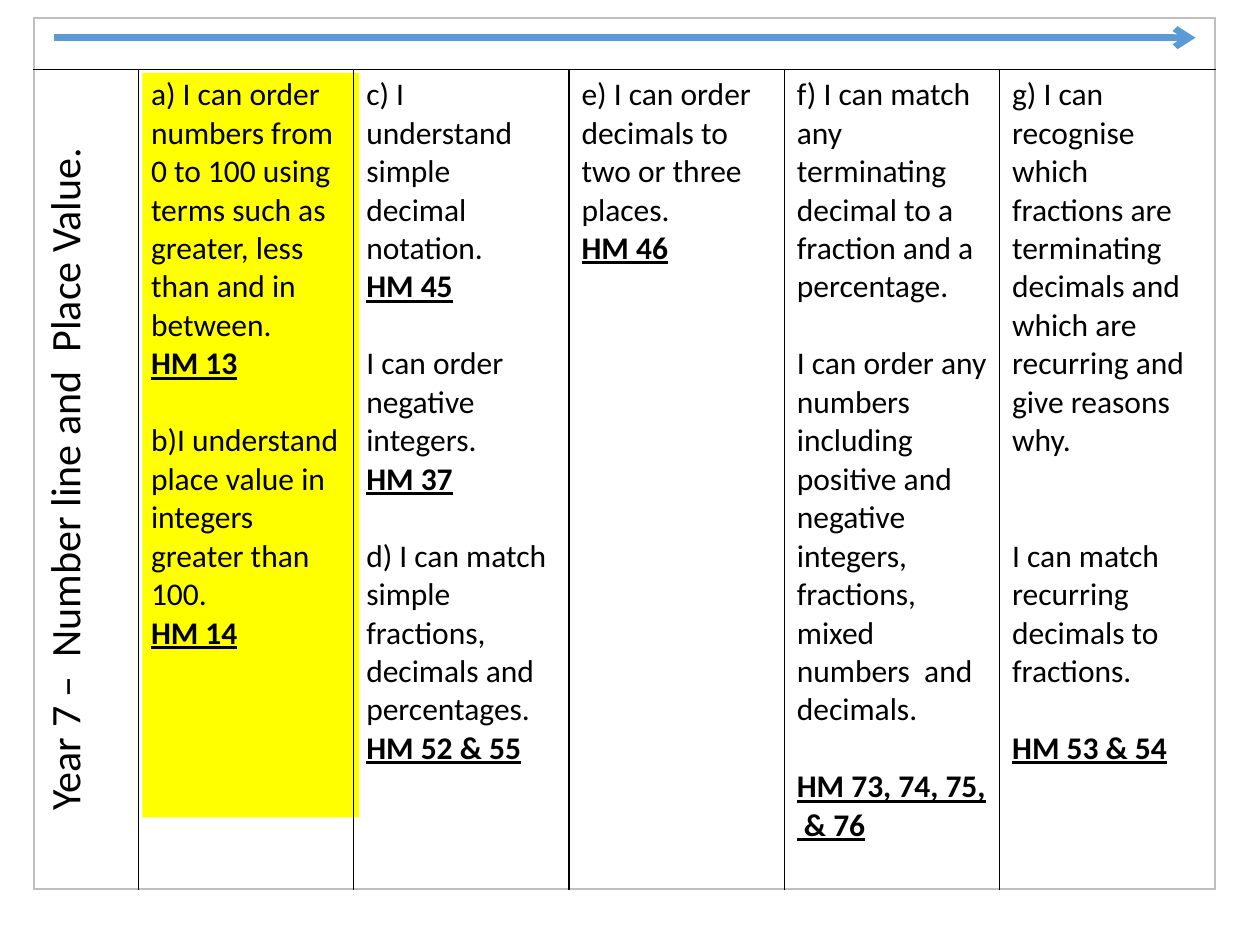
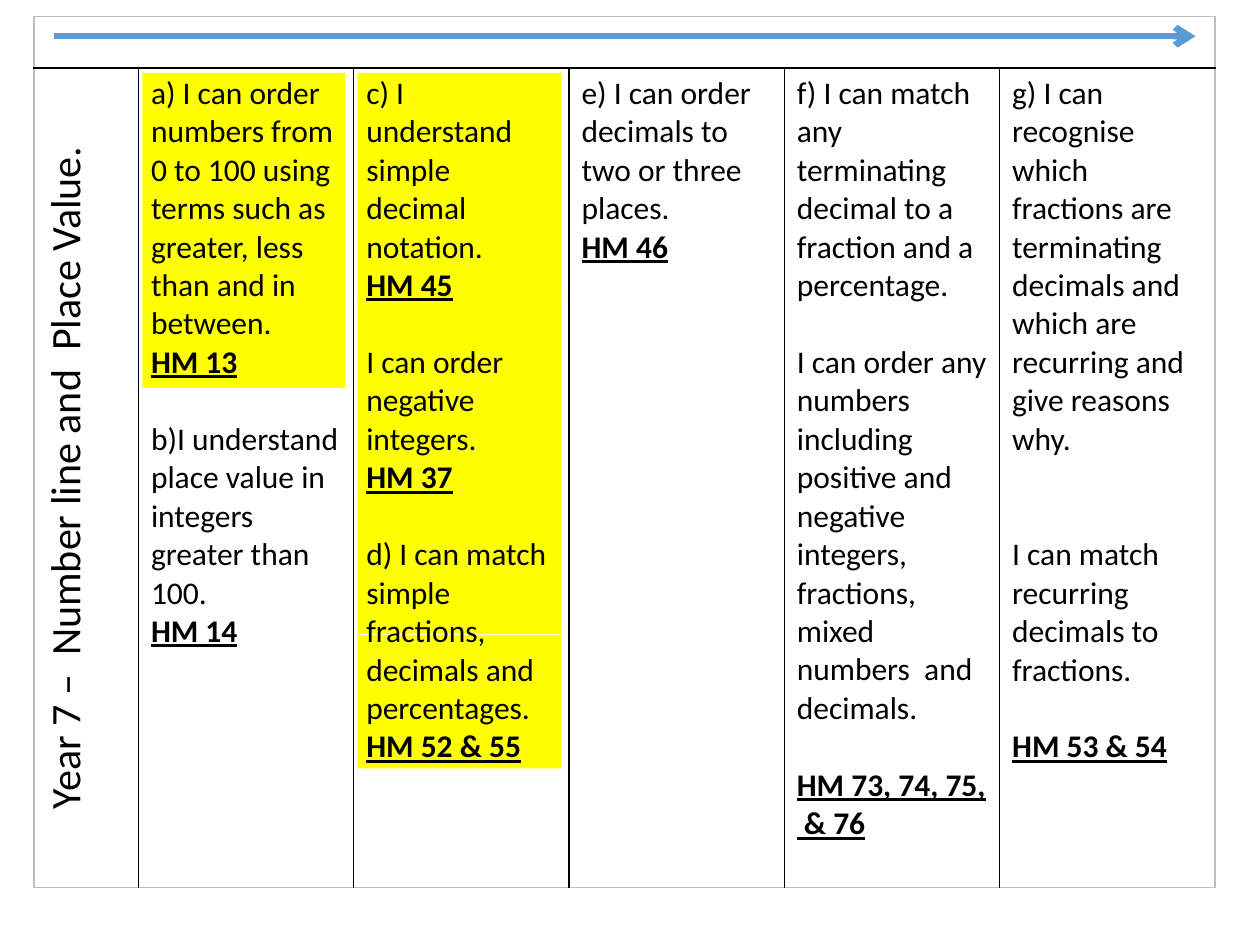
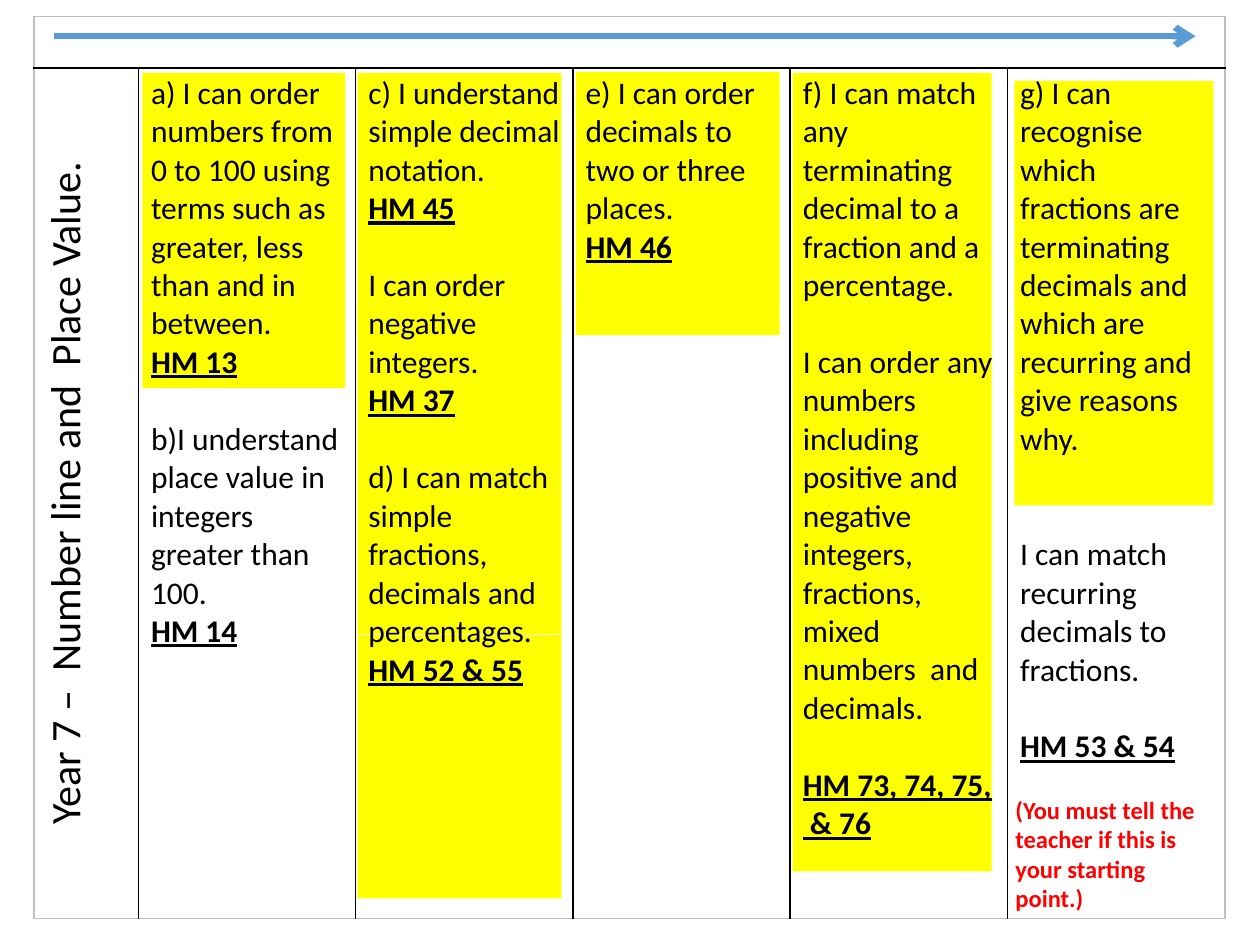
from lxml import etree
from pptx import Presentation
from pptx.dml.color import RGBColor
from pptx.enum.shapes import MSO_CONNECTOR, MSO_SHAPE
from pptx.enum.text import PP_ALIGN
from pptx.oxml.ns import qn
from pptx.util import Cm, Pt

RECT = MSO_SHAPE.RECTANGLE
LINE = MSO_CONNECTOR.STRAIGHT
LEFT, MID = PP_ALIGN.LEFT, PP_ALIGN.CENTER

HUES = {"ink": "000000", "mark": "FFFF00", "arrow": "5B9BD5",
        "edge": "BFBFBF", "note": "FF0000"}
FONT = "Calibri"
GAP = 22
SIDE = 2.1
HEAD = 1.04
TITLE = "Year 7 –  Number line and  Place Value."

# Each goal is its text, its task label, the blank lines above the text and above the label.
GOALS = [
    [("a) I can order numbers from 0 to 100 using terms such as greater, "
      "less than and in between.", "HM 13", 0, 0),
     ("b)I understand place value in integers greater than 100.", "HM 14", 1, 0)],
    [("c) I understand simple decimal notation.", "HM 45", 0, 0),
     ("I can order negative integers.", "HM 37", 1, 0),
     ("d) I can match simple fractions, decimals and percentages.",
      "HM 52 & 55", 1, 0)],
    [("e) I can order decimals to two or three places.", "HM 46", 0, 0)],
    [("f) I can match any  terminating decimal to a fraction and a percentage.",
      None, 0, 0),
     ("I can order any numbers including positive and negative integers, "
      "fractions, mixed numbers  and decimals.", "HM 73, 74, 75,  & 76", 1, 1)],
    [("g) I can recognise which fractions are terminating decimals and which "
      "are recurring and give reasons why.", None, 0, 0),
     ("I can match recurring decimals to fractions.", "HM 53 & 54", 2, 1)],
]

FIRST = (2.18, 1.14, 4.09, 6.35)
THIRD = (6.52, 5.74, 4.11, 6.71)
PAGES = [
    {"box": (0.69, 0.36, 4.34, 16.52),
     "marks": [(2.18, 1.11, 4.37, 15.01)]},
    {"box": (0.69, 0.33, 4.34, 16.52),
     "marks": [(6.52, 1.14, 4.11, 4.62), (6.52, 12.47, 4.11, 2.69),
               THIRD, FIRST]},
    {"box": (0.69, 0.33, 4.38, 17.15),
     "marks": [(19.76, 1.3, 4.01, 8.56), (15.29, 1.14, 4.01, 16.1),
               (6.52, 1.14, 4.11, 5.31), (6.52, 12.47, 4.11, 5.31),
               (10.92, 1.12, 4.11, 5.31), THIRD, FIRST],
     "note": "(You must tell the teacher if this is your starting point.)"},
]


def tint(name):
    return RGBColor.from_string(HUES[name])


def write(frame, text, size=18, hue="ink", bold=False, line=False,
          align=LEFT, gap=0):
    para = frame.paragraphs[0]
    if para.runs:
        para = frame.add_paragraph()
    para.alignment = align
    para.space_before = Pt(gap)
    run = para.add_run()
    run.text = text
    font = run.font
    font.name, font.size = FONT, Pt(size)
    font.bold, font.underline = bold, line
    font.color.rgb = tint(hue)


def border(cell, hues):
    props = cell._tc.get_or_add_tcPr()
    for spot, (side, hue) in enumerate(hues.items()):
        edge = etree.Element(qn("a:" + side), w=str(Pt(1)))
        fill = etree.SubElement(edge, qn("a:solidFill"))
        etree.SubElement(fill, qn("a:srgbClr"), val=HUES[hue])
        props.insert(spot, edge)


def add_marks(slide, box, marks):
    left, top = box[:2]
    for x, y, wide, high in marks:
        mark = slide.shapes.add_shape(
            RECT, Cm(left + x), Cm(top + y), Cm(wide), Cm(high))
        mark.shadow.inherit = False
        mark.fill.solid()
        mark.fill.fore_color.rgb = tint("mark")
        mark.line.fill.background()


def add_arrow(slide, box):
    left, top = box[:2]
    y = Cm(top + 0.4)
    arrow = slide.shapes.add_connector(
        LINE, Cm(left + 0.4), y, Cm(left + 23.41), y)
    arrow.line.color.rgb = tint("arrow")
    arrow.line.width = Pt(3.75)
    etree.SubElement(arrow.line._get_or_add_ln(), qn("a:tailEnd"), type="arrow")
    etree.SubElement(arrow._element.spPr, qn("a:effectLst"))


def add_note(slide, box, text):
    left, top = box[:2]
    note = slide.shapes.add_textbox(
        Cm(left + 19.53), Cm(top + 15.57), Cm(4.39), Cm(2.64))
    note.text_frame.word_wrap = True
    write(note.text_frame, text, size=14, hue="note", bold=True)


def add_goals(frame, goals):
    for text, task, above, split in goals:
        write(frame, text, gap=above * GAP)
        if task:
            write(frame, task, bold=True, line=True, gap=split * GAP)


def add_grid(slide, box):
    left, top, wide, high = box
    count = len(GOALS)
    grid = slide.shapes.add_table(
        2, count + 1, Cm(left), Cm(top),
        Cm(SIDE + count * wide), Cm(HEAD + high)).table
    grid.first_row = grid.horz_banding = False
    for spot, col in enumerate(grid.columns):
        col.width = Cm(wide if spot else SIDE)
    for row, size in zip(grid.rows, (HEAD, high)):
        row.height = Cm(size)
    for r in range(2):
        for c in range(count + 1):
            cell = grid.cell(r, c)
            cell.fill.background()
            border(cell, {
                "lnL": "ink" if r and c else "edge",
                "lnR": "ink" if r and c < count else "edge",
                "lnT": "ink" if r else "edge",
                "lnB": "edge" if r else "ink"})
    grid.cell(0, 0).merge(grid.cell(0, count))
    name = grid.cell(1, 0)
    name._tc.get_or_add_tcPr().set("vert", "vert270")
    write(name.text_frame, TITLE, size=24, align=MID)
    for c, goals in enumerate(GOALS, 1):
        add_goals(grid.cell(1, c).text_frame, goals)


def add_page(deck, box, marks, note=None):
    slide = deck.slides.add_slide(deck.slide_layouts[6])
    add_marks(slide, box, marks)
    add_arrow(slide, box)
    if note:
        add_note(slide, box, note)
    add_grid(slide, box)


def main():
    deck = Presentation()
    deck.slide_width, deck.slide_height = Cm(25.4), Cm(19.05)
    for page in PAGES:
        add_page(deck, **page)
    deck.save("out.pptx")


if __name__ == "__main__":
    main()
